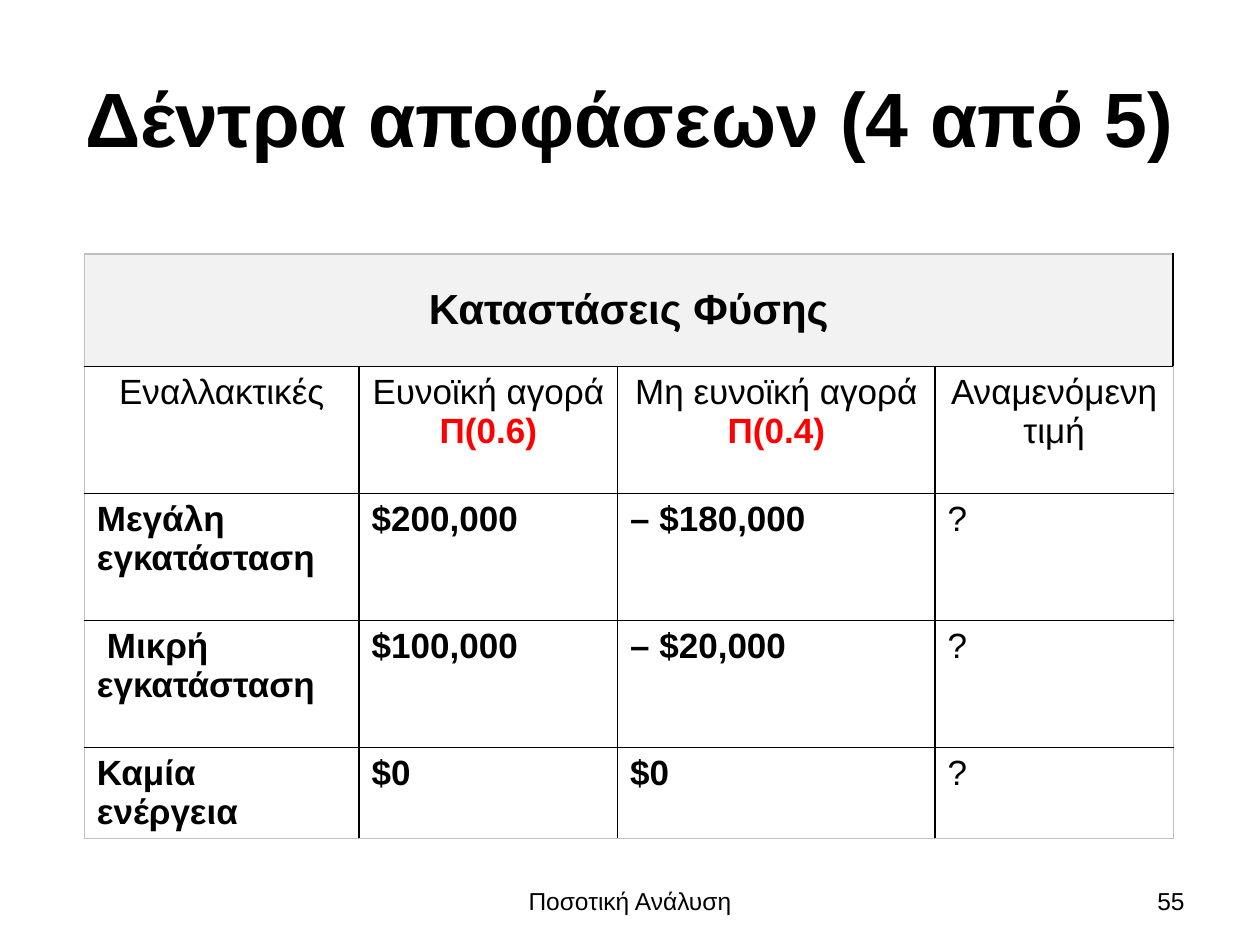
import pptx
import pptx.util
import pptx.dml.color
import pptx.enum.text
import pptx.oxml.ns
import lxml.etree
from pptx.util import Cm

ALIGN = pptx.enum.text.PP_ALIGN
ANCHOR = pptx.enum.text.MSO_ANCHOR
BLACK, RED, GREY, HEADER_FILL = "000000", "FF0000", "BFBFBF", "F2F2F2"
COLUMN_WIDTHS = [5.54, 5.21, 6.4, 4.8]
ROW_HEIGHTS = [2.27, 2.56, 2.56, 2.56, 1.45]
HEADINGS = [
    ("Εναλλακτικές", ""),
    ("Ευνοϊκή αγορά ", "Π(0.6)"),
    ("Μη ευνοϊκή αγορά ", "Π(0.4)"),
    ("Αναμενόμενη τιμή", ""),
]
ALTERNATIVES = [
    ("Μεγάλη εγκατάσταση", "$200,000", "– $180,000", "?"),
    ("Μικρή εγκατάσταση", "$100,000", "– $20,000", "?"),
    ("Καμία ενέργεια", "$0", "$0", "?"),
]


def color(hex_value):
    return pptx.dml.color.RGBColor.from_string(hex_value)


def write(paragraph, text, size=20, bold=False, fill=BLACK, align=ALIGN.LEFT):
    paragraph.alignment = align
    run = paragraph.add_run()
    run.text = text
    run.font.name = "Arial"
    run.font.size = pptx.util.Pt(size)
    run.font.bold = bold
    run.font.color.rgb = color(fill)


def set_border(cell, side, hex_value, width):
    properties = cell._tc.get_or_add_tcPr()
    tag = pptx.oxml.ns.qn
    line = lxml.etree.SubElement(properties, tag("a:ln" + side), w=str(pptx.util.Pt(width)))
    solid = lxml.etree.SubElement(line, tag("a:solidFill"))
    lxml.etree.SubElement(solid, tag("a:srgbClr"), val=hex_value)


def style_cell(cell, row, column):
    outer_edges = {
        "L": column == 0,
        "R": column == len(COLUMN_WIDTHS) - 1,
        "T": row == 0,
        "B": row == len(ROW_HEIGHTS) - 1,
    }
    for side, is_outer in outer_edges.items():
        set_border(cell, side, GREY if is_outer else BLACK, 0.75 if is_outer else 1)
    if row == 0:
        cell.fill.solid()
        cell.fill.fore_color.rgb = color(HEADER_FILL)
    else:
        cell.fill.background()


def add_title(slide, left, top, width, height):
    title = slide.shapes.title
    title.left, title.top, title.width, title.height = Cm(left), Cm(top), Cm(width), Cm(height)
    title.text_frame.vertical_anchor = ANCHOR.MIDDLE
    write(title.text_frame.paragraphs[0], "Δέντρα αποφάσεων (4 από 5)",
          size=44, bold=True, align=ALIGN.CENTER)


def add_payoff_table(slide, left, top):
    table = slide.shapes.add_table(
        len(ROW_HEIGHTS), len(COLUMN_WIDTHS), Cm(left), Cm(top),
        Cm(sum(COLUMN_WIDTHS)), Cm(sum(ROW_HEIGHTS))).table
    for column, width in zip(table.columns, COLUMN_WIDTHS):
        column.width = Cm(width)
    for row, height in zip(table.rows, ROW_HEIGHTS):
        row.height = Cm(height)
    for row in range(len(ROW_HEIGHTS)):
        for column in range(len(COLUMN_WIDTHS)):
            style_cell(table.cell(row, column), row, column)

    header = table.cell(0, 0)
    header.merge(table.cell(0, len(COLUMN_WIDTHS) - 1))
    header.vertical_anchor = ANCHOR.MIDDLE
    write(header.text_frame.paragraphs[0], "Καταστάσεις Φύσης",
          size=24, bold=True, align=ALIGN.CENTER)

    for column, (heading, probability) in enumerate(HEADINGS):
        paragraph = table.cell(1, column).text_frame.paragraphs[0]
        write(paragraph, heading, align=ALIGN.CENTER)
        if probability:
            write(paragraph, probability, bold=True, fill=RED, align=ALIGN.CENTER)

    for row, values in enumerate(ALTERNATIVES, start=2):
        for column, value in enumerate(values):
            paragraph = table.cell(row, column).text_frame.paragraphs[0]
            write(paragraph, value, bold=value != "?")

    small_plant = table.cell(3, 0).text_frame.paragraphs[0]
    small_plant._p.get_or_add_pPr().set("indent", str(Cm(0.2)))


def add_footer_text(slide, text, left, top, width, height, align):
    box = slide.shapes.add_textbox(Cm(left), Cm(top), Cm(width), Cm(height))
    box.text_frame.word_wrap = True
    box.text_frame.vertical_anchor = ANCHOR.MIDDLE
    write(box.text_frame.paragraphs[0], text, size=14, align=align)


def main():
    presentation = pptx.Presentation()
    presentation.slide_width, presentation.slide_height = Cm(25.4), Cm(19.05)
    slide = presentation.slides.add_slide(presentation.slide_layouts[5])
    add_title(slide, 1.27, 0.76, 22.86, 3.18)
    add_payoff_table(slide, 1.7, 5.12)
    add_footer_text(slide, "Ποσοτική Ανάλυση", 8.68, 17.66, 8.04, 1.01, ALIGN.CENTER)
    add_footer_text(slide, "55", 18.2, 17.66, 5.93, 1.01, ALIGN.RIGHT)
    presentation.save("out.pptx")


if __name__ == "__main__":
    main()
